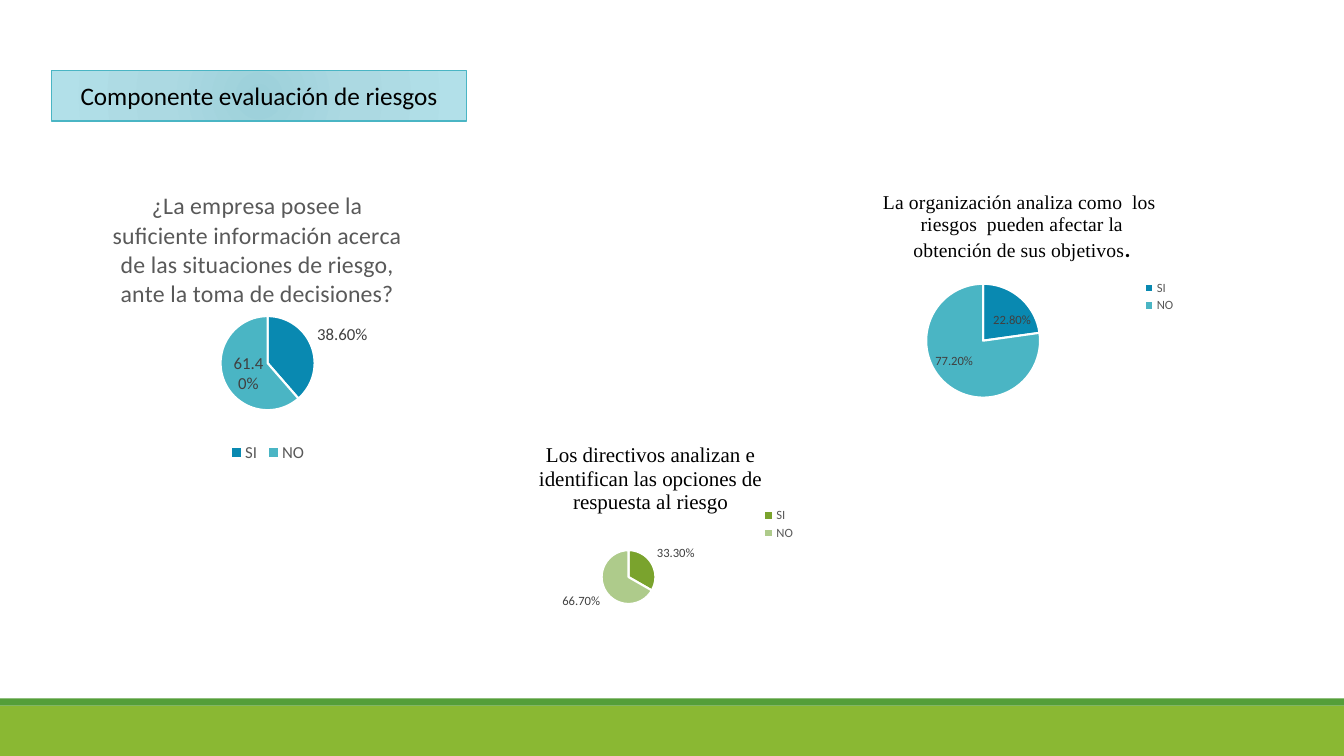
from lxml import etree
from pptx import Presentation
from pptx.chart.data import CategoryChartData
from pptx.dml.color import RGBColor
from pptx.enum.chart import XL_CHART_TYPE as ChartType, XL_LABEL_POSITION as LabelPos
from pptx.enum.chart import XL_LEGEND_POSITION as LegendPos
from pptx.enum.shapes import MSO_SHAPE as Shape
from pptx.enum.text import MSO_ANCHOR as Anchor, PP_ALIGN as Align
from pptx.oxml import parse_xml
from pptx.oxml.ns import nsdecls, qn
from pptx.util import Cm, Pt

BLACK = RGBColor(0x00, 0x00, 0x00)
WHITE = RGBColor(0xFF, 0xFF, 0xFF)
GRAY = RGBColor(0x59, 0x59, 0x59)
LABEL_GRAY = RGBColor(0x40, 0x40, 0x40)
LIME = RGBColor(0x8A, 0xB8, 0x33)
GREEN = RGBColor(0x54, 0x9E, 0x39)
BLUE = RGBColor(0x09, 0x89, 0xB1)
TEAL = RGBColor(0x4A, 0xB5, 0xC4)
OLIVE = RGBColor(0x7A, 0xA3, 0x2D)
PALE_GREEN = RGBColor(0xAE, 0xCB, 0x8B)
SANS, SERIF = "Calibri", "Times New Roman"


def set_font(font, size, color, name=SANS, bold=False):
    font.size, font.name, font.bold = Pt(size), name, bold
    font.color.rgb = color


def set_layout(parent, index, **parts):
    """Place a chart part by fractions of the chart area."""
    for old in parent.findall(qn("c:layout")):
        parent.remove(old)
    layout = etree.Element(qn("c:layout"))
    manual = etree.SubElement(layout, qn("c:manualLayout"))
    if parent.tag == qn("c:plotArea"):
        etree.SubElement(manual, qn("c:layoutTarget")).set("val", "inner")
    for mode in ("xMode", "yMode"):
        etree.SubElement(manual, qn(f"c:{mode}")).set("val", "edge")
    for key, value in parts.items():
        etree.SubElement(manual, qn(f"c:{key}")).set("val", str(value))
    parent.insert(index, layout)


prs = Presentation()
prs.slide_width, prs.slide_height = Cm(33.87), Cm(19.05)
s = prs.slides.add_slide(prs.slide_layouts[5])

# Footer bands
for top, height, color in ((17.78, 1.27, LIME), (17.6, 0.18, GREEN)):
    sp = s.shapes.add_shape(Shape.RECTANGLE, 0, Cm(top), prs.slide_width, Cm(height))
    sp.shadow.inherit = False
    sp.fill.solid()
    sp.fill.fore_color.rgb = color
    sp.line.fill.background()

# Title with a radial gradient
title = s.shapes.title
title.left, title.top, title.width, title.height = Cm(1.3), Cm(1.78), Cm(10.46), Cm(1.27)
stops = "".join(
    f'<a:gs pos="{pos * 1000}"><a:srgbClr val="{color}"/></a:gs>'
    for pos, color in ((0, "9CD0DA"), (45, "ACD9E2"), (100, "B2E0E9")))
title._element.spPr.append(parse_xml(
    f'<a:gradFill {nsdecls("a")} rotWithShape="1"><a:gsLst>{stops}</a:gsLst>'
    '<a:path path="circle"><a:fillToRect l="50000" t="50000" r="50000" b="50000"/>'
    '</a:path></a:gradFill>'))
title.line.color.rgb = TEAL
title.line.width = Pt(1)
tf = title.text_frame
tf.word_wrap = True
tf.vertical_anchor = Anchor.MIDDLE
p = tf.paragraphs[0]
p.alignment = Align.CENTER
r = p.add_run()
r.text = "Componente evaluación de riesgos"
set_font(r.font, 18, BLACK)

# Pie charts: box in cm, title runs, title place, SI share, slice colours,
# pie place, label size, legend size and legend place (None: bottom)
pies = [
    ((1.73, 3.86, 10.03, 7.9),
     [("¿La empresa posee la suficiente información acerca de las situaciones "
       "de riesgo, ante la toma de decisiones?", 17, GRAY, SANS, False)],
     dict(x=0.1, y=0.1), 0.386, (BLUE, TEAL),
     dict(x=0.38, y=0.52, w=0.24, h=0.3), 12, None),
    ((12.29, 10.62, 7.98, 5.13),
     [("Los directivos analizan e identifican las opciones de respuesta al riesgo",
       15, BLACK, SERIF, False)],
     dict(x=0.15, y=0.08), 0.333, (OLIVE, PALE_GREEN),
     dict(x=0.36, y=0.63, w=0.17, h=0.27), 9, dict(x=0.86, y=0.41, w=0.12, h=0.19)),
    ((20.83, 4.27, 8.97, 6.35),
     [("La organización analiza como  los  riesgos  pueden afectar la obtención "
       "de sus objetivos", 14, BLACK, SERIF, False),
      (".", 16, BLACK, SANS, True)],
     dict(x=0.15, y=0.07), 0.228, (BLUE, TEAL),
     dict(x=0.28, y=0.45, w=0.32, h=0.46), 9, dict(x=0.88, y=0.43, w=0.11, h=0.15)),
]
for box, runs, title_at, share, colors, pie_at, size, legend_at in pies:
    data = CategoryChartData(number_format="0.00%")
    data.categories = ["SI", "NO"]
    data.add_series("Series 1", (share, round(1 - share, 3)))
    chart = s.shapes.add_chart(ChartType.PIE, *map(Cm, box), data).chart
    set_font(chart.font, 10, BLACK)

    # Chart title
    chart.has_title = True
    p = chart.chart_title.text_frame.paragraphs[0]
    for text, *style in runs:
        r = p.add_run()
        r.text = text
        set_font(r.font, *style)
    chart.chart_title.include_in_layout = False
    set_layout(chart.chart_title._element, 1, **title_at)

    # Slices and labels
    plot = chart.plots[0]
    plot.vary_by_categories = True
    for i, color in enumerate(colors):
        fmt = plot.series[0].points[i].format
        fmt.fill.solid()
        fmt.fill.fore_color.rgb = color
        fmt.line.color.rgb = WHITE
        fmt.line.width = Pt(1.5)
    labels = plot.series[0].data_labels
    labels.show_value = True
    labels.show_percentage = False
    labels.number_format = "0.00%"
    labels.number_format_is_linked = False
    labels.position = LabelPos.BEST_FIT
    set_font(labels.font, size, LABEL_GRAY)
    set_layout(chart._chartSpace.chart.plotArea, 0, **pie_at)

    # Legend
    chart.has_legend = True
    legend = chart.legend
    legend.include_in_layout = False
    legend.position = LegendPos.RIGHT if legend_at else LegendPos.BOTTOM
    set_font(legend.font, size, GRAY)
    if legend_at:
        set_layout(legend._element, 1, **legend_at)

prs.save("out.pptx")
